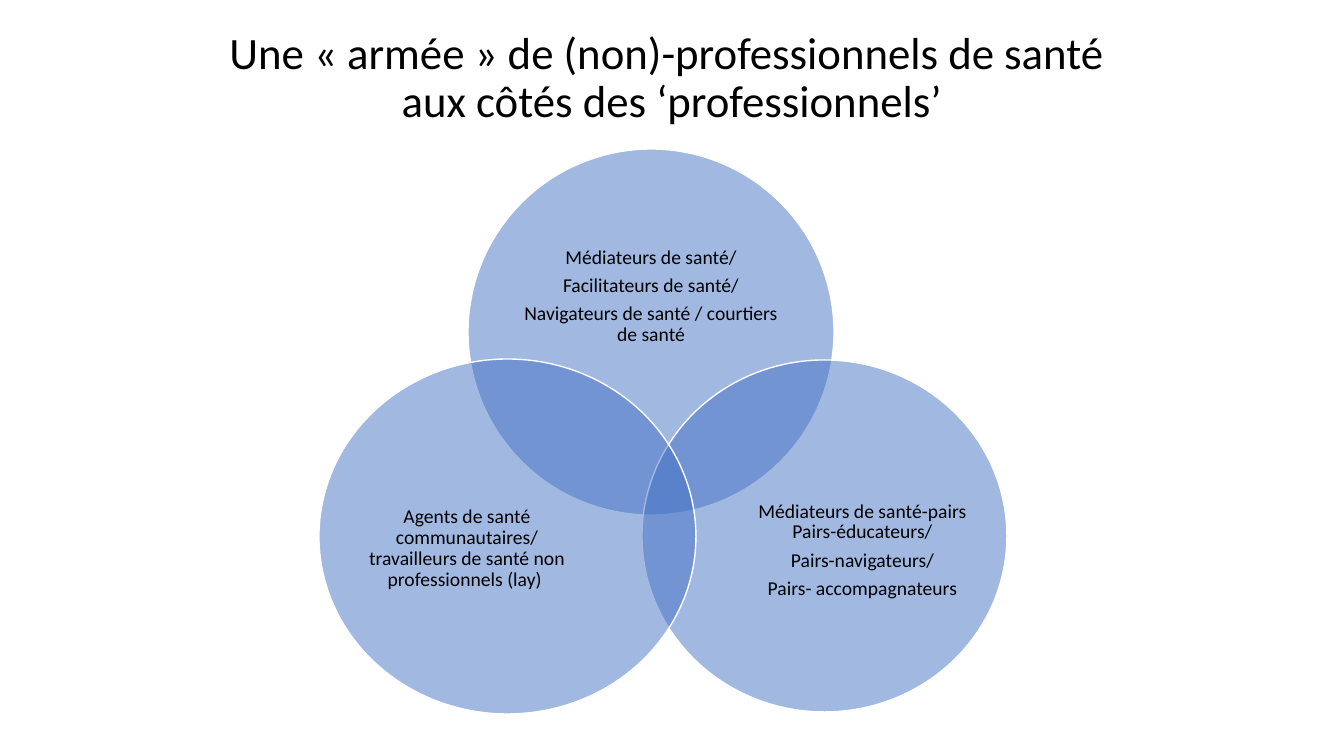
from lxml import etree
from pptx import Presentation
from pptx.dml.color import RGBColor
from pptx.enum.shapes import MSO_SHAPE
from pptx.enum.text import MSO_ANCHOR, MSO_AUTO_SIZE, PP_ALIGN
from pptx.oxml.ns import qn
from pptx.util import Pt

OVAL = MSO_SHAPE.OVAL
MIDDLE = MSO_ANCHOR.MIDDLE
NO_FIT = MSO_AUTO_SIZE.NONE
CENTER = PP_ALIGN.CENTER

# Content: lengths in px
SLIDE_SIZE = (1344, 756)
COLORS = {"circle": "4472C4", "outline": "FFFFFF", "text": "000000"}
FONT = "Calibri"
TITLE = {
    "box": (23, 17, 1298, 124),
    "lines": ["Une « armée » de (non)-professionnels de santé ",
              "aux côtés des ‘professionnels’"],
}
# Each paragraph: text, line spacing, space after in points
CIRCLES = [
    {"oval": (468, 149, 366, 366), "label": (517, 214, 268, 165),
     "paragraphs": [("Médiateurs de santé/", 0.9, 5),
                    ("Facilitateurs de santé/", 0.9, 5),
                    ("Navigateurs de santé / courtiers de santé", 0.9, 5)]},
    {"oval": (642, 360, 365, 352), "label": (753, 452, 219, 194),
     "paragraphs": [("Médiateurs de santé-pairs", 1.0, 0),
                    ("Pairs-éducateurs/", 0.9, 5),
                    ("Pairs-navigateurs/", 0.9, 5),
                    ("Pairs- accompagnateurs", 0.9, 5)]},
    {"oval": (319, 359, 377, 355), "label": (354, 451, 226, 195),
     "paragraphs": [("Agents de santé communautaires/ travailleurs de santé "
                     "non professionnels (lay) ", 0.9, 5)]},
]


def px(length):
    return round(length * 914400 / 100.8)


def color(name):
    return RGBColor.from_string(COLORS[name])


def set_all(target, values):
    for name, value in values.items():
        setattr(target, name, value)


def format_frame(frame, margin):
    set_all(frame, {"word_wrap": True, "auto_size": NO_FIT, "vertical_anchor": MIDDLE,
                    "margin_left": px(margin), "margin_right": px(margin),
                    "margin_top": px(margin), "margin_bottom": px(margin)})


def add_span(para, text, size):
    span = para.add_run()
    span.text = text
    set_all(span.font, {"name": FONT, "size": Pt(size)})
    span.font.color.rgb = color("text")


def add_circle(shapes, box):
    circle = shapes.add_shape(OVAL, *map(px, box))
    circle.shadow.inherit = False
    circle.fill.solid()
    circle.fill.fore_color.rgb = color("circle")
    fill_color = circle.fill._xPr.find(qn("a:solidFill"))[0]
    etree.SubElement(fill_color, qn("a:alpha"), val="50000")
    circle.line.color.rgb = color("outline")
    circle.line.width = Pt(1)


def add_label(shapes, box, paragraphs):
    frame = shapes.add_textbox(*map(px, box)).text_frame
    format_frame(frame, 0)
    for index, (text, spacing, after) in enumerate(paragraphs):
        para = frame.add_paragraph() if index else frame.paragraphs[0]
        set_all(para, {"alignment": CENTER, "line_spacing": spacing,
                       "space_before": Pt(0), "space_after": Pt(after)})
        add_span(para, text, 14)


deck = Presentation()
deck.slide_width, deck.slide_height = map(px, SLIDE_SIZE)
page = deck.slides.add_slide(deck.slide_layouts[5])

# Title
title = page.shapes.title
set_all(title, dict(zip(("left", "top", "width", "height"), map(px, TITLE["box"]))))
format_frame(title.text_frame, 10)
heading = title.text_frame.paragraphs[0]
set_all(heading, {"alignment": CENTER, "line_spacing": 0.9, "space_before": Pt(0)})
for index, line in enumerate(TITLE["lines"]):
    if index:
        heading.add_line_break()
    add_span(heading, line, 32)

# Venn diagram
diagram = page.shapes.add_group_shape()
for part in CIRCLES:
    add_circle(diagram.shapes, part["oval"])
    add_label(diagram.shapes, part["label"], part["paragraphs"])

deck.save("out.pptx")
